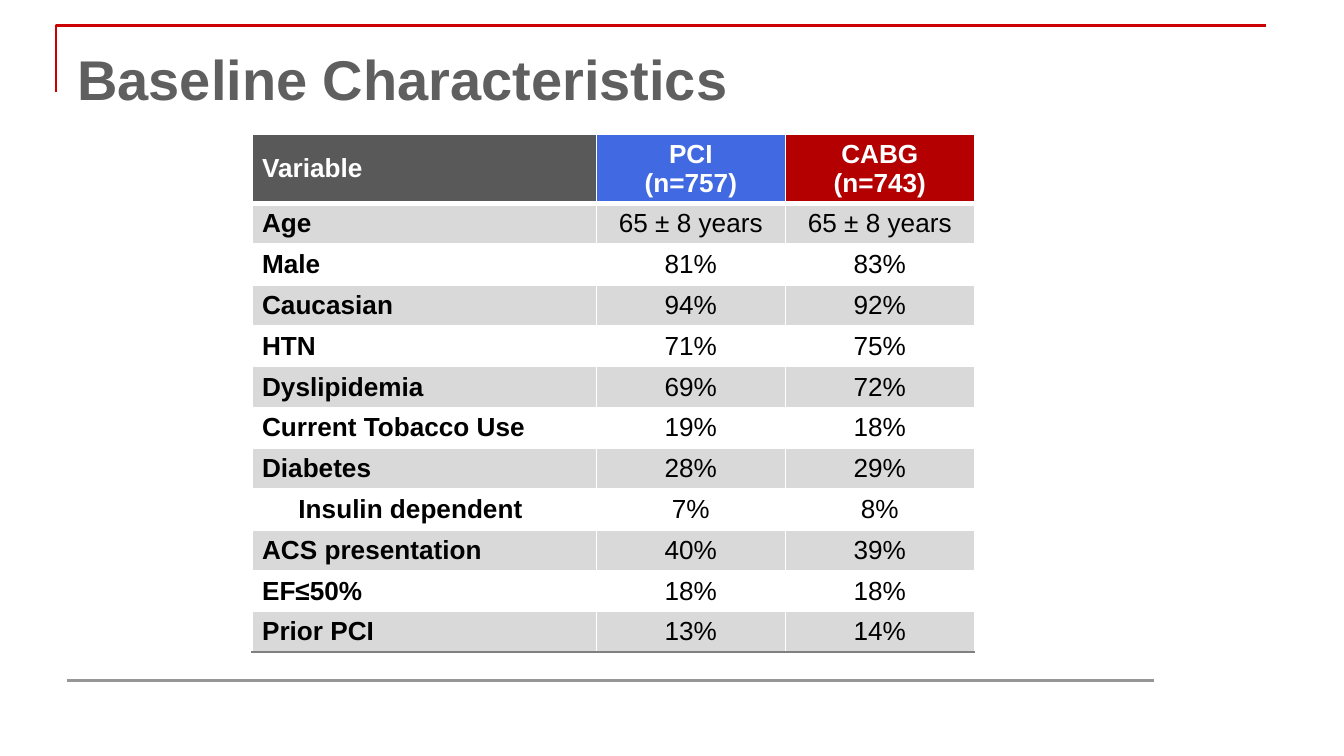
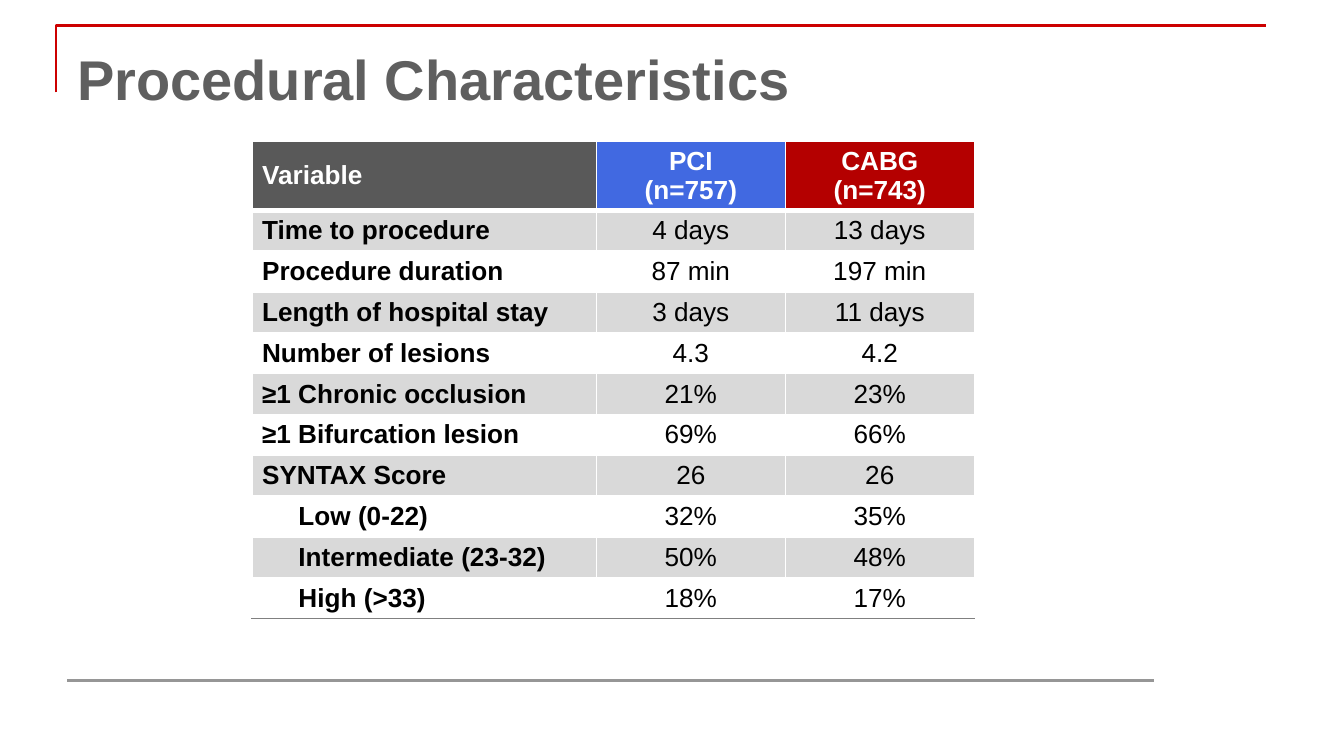
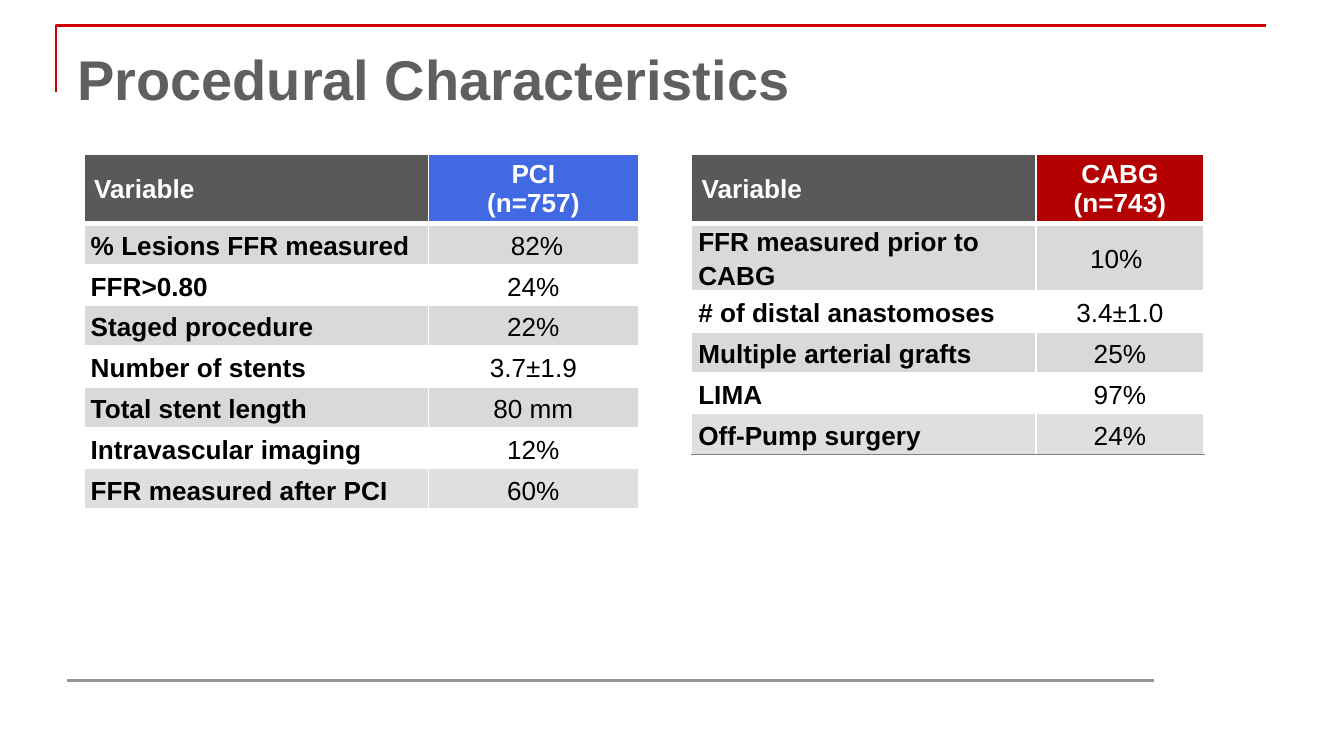
"""Build three slides of baseline and procedural characteristics tables."""
from lxml import etree
from pptx import Presentation
from pptx.dml.color import RGBColor
from pptx.enum import shapes, text
from pptx.oxml import ns
from pptx.util import Pt

FONT = "Arial"
WHITE = RGBColor(0xFF, 0xFF, 0xFF)
BLACK = RGBColor(0x00, 0x00, 0x00)
RED = RGBColor(0xCC, 0x00, 0x00)
RULE_GREY = RGBColor(0x96, 0x96, 0x96)
TITLE_GREY = RGBColor(0x5F, 0x5F, 0x5F)
HEADER_GREY = RGBColor(0x59, 0x59, 0x59)
EDGE_GREY = RGBColor(0x80, 0x80, 0x80)
BAND = RGBColor(0xD9, 0xD9, 0xD9)
LAST_BAND = RGBColor(0xDF, 0xDF, 0xDF)
PCI_BLUE = RGBColor(0x41, 0x69, 0xE1)
CABG_RED = RGBColor(0xB4, 0x00, 0x00)

VARIABLE = ("Variable", HEADER_GREY)
PCI = ("PCI\n(n=757)", PCI_BLUE)
CABG = ("CABG\n(n=743)", CABG_RED)

HEADER_HEIGHT, ROW_HEIGHT = 37, 21.86
SUB_INDENT = 19.5
WIDE = {"inset": (5.4, 2.7), "spacing": None, "last_band": BAND}
TIGHT = {"inset": (3.6, 0), "spacing": 1.15, "last_band": LAST_BAND}
BOTH_ARMS = {"header": [VARIABLE, PCI, CABG], "widths": [184.5, 101.25, 101.25],
             "left": 135, "style": WIDE, "edge": EDGE_GREY}

SLIDES = [
    ("Baseline Characteristics", [
        {**BOTH_ARMS, "top": 72, "indented": {"Insulin dependent"}, "rows": [
            ("Age", "65 ± 8 years", "65 ± 8 years"),
            ("Male", "81%", "83%"),
            ("Caucasian", "94%", "92%"),
            ("HTN", "71%", "75%"),
            ("Dyslipidemia", "69%", "72%"),
            ("Current Tobacco Use", "19%", "18%"),
            ("Diabetes", "28%", "29%"),
            ("Insulin dependent", "7%", "8%"),
            ("ACS presentation", "40%", "39%"),
            ("EF≤50%", "18%", "18%"),
            ("Prior PCI", "13%", "14%"),
        ]},
    ]),
    ("Procedural Characteristics", [
        {**BOTH_ARMS, "top": 75.75,
         "indented": {"Low (0-22)", "Intermediate (23-32)", "High (>33)"}, "rows": [
             ("Time to procedure", "4 days", "13 days"),
             ("Procedure duration", "87 min", "197 min"),
             ("Length of hospital stay", "3 days", "11 days"),
             ("Number of lesions", "4.3", "4.2"),
             ("≥1 Chronic occlusion", "21%", "23%"),
             ("≥1 Bifurcation lesion", "69%", "66%"),
             ("SYNTAX Score", "26", "26"),
             ("Low (0-22)", "32%", "35%"),
             ("Intermediate (23-32)", "50%", "48%"),
             ("High (>33)", "18%", "17%"),
         ]},
    ]),
    ("Procedural Characteristics", [
        {"header": [VARIABLE, PCI], "widths": [184.5, 112.5], "left": 45, "top": 82.8,
         "style": TIGHT, "edge": WHITE, "indented": set(), "rows": [
             ("% Lesions FFR measured", " 82%"),
             ("FFR>0.80", "24%"),
             ("Staged procedure", "22%"),
             ("Number of stents", "3.7±1.9"),
             ("Total stent length", "80 mm"),
             ("Intravascular imaging", "12%"),
             ("FFR measured after PCI", "60%"),
         ]},
        {"header": [VARIABLE, CABG], "widths": [184.5, 90], "left": 370.5, "top": 82.8,
         "style": TIGHT, "edge": EDGE_GREY, "indented": set(), "rows": [
             ("FFR measured prior to CABG", "10% "),
             ("# of distal anastomoses", "3.4±1.0"),
             ("Multiple arterial grafts", "25%"),
             ("LIMA", "97%"),
             ("Off-Pump surgery", "24%"),
         ]},
    ]),
]


def write(paragraph, words, size, color, bold):
    run = paragraph.add_run()
    run.text = words
    run.font.name, run.font.size = FONT, Pt(size)
    run.font.bold = bold
    run.font.color.rgb = color


def draw_frame(slide):
    corner = slide.shapes.build_freeform(Pt(30), Pt(49.5))
    corner.add_line_segments([(Pt(30), Pt(13.5)), (Pt(678), Pt(13.5))], close=False)
    bracket = corner.convert_to_shape()
    bracket.fill.background()
    bracket.shadow.inherit = False
    footer_rule = slide.shapes.add_connector(
        shapes.MSO_CONNECTOR.STRAIGHT, Pt(36), Pt(364.5), Pt(618), Pt(364.5))
    etree.SubElement(footer_rule._element.spPr, ns.qn("a:effectLst"))
    for rule, color in ((bracket, RED), (footer_rule, RULE_GREY)):
        rule.line.color.rgb = color
        rule.line.width = Pt(1.5)


def set_title(slide, words):
    title = slide.shapes.title
    title.left, title.top, title.width, title.height = Pt(36), Pt(16.5), Pt(648), Pt(67)
    frame = title.text_frame
    frame.vertical_anchor = text.MSO_ANCHOR.TOP
    frame.auto_size = text.MSO_AUTO_SIZE.NONE
    frame.margin_left = frame.margin_right = Pt(5.4)
    frame.margin_top = Pt(7.2)
    frame.paragraphs[0].alignment = text.PP_ALIGN.LEFT
    write(frame.paragraphs[0], words, 30, TITLE_GREY, True)


def set_borders(cell, top_width, bottom_width, bottom_color):
    properties = cell._tc.get_or_add_tcPr()
    edges = (("a:lnL", 1, WHITE), ("a:lnR", 1, WHITE),
             ("a:lnT", top_width, WHITE), ("a:lnB", bottom_width, bottom_color))
    for tag, width, color in edges:
        line = etree.SubElement(properties, ns.qn(tag), w=str(Pt(width)))
        fill = etree.SubElement(line, ns.qn("a:solidFill"))
        etree.SubElement(fill, ns.qn("a:srgbClr"), val=str(color))


def fill_cell(cell, words, fill, color, bold, centred, inset, spacing=None, indent=0):
    cell.fill.solid()
    cell.fill.fore_color.rgb = fill
    cell.vertical_anchor = text.MSO_ANCHOR.MIDDLE
    side, end = inset
    cell.margin_left, cell.margin_right = Pt(side + indent), Pt(side)
    cell.margin_top = cell.margin_bottom = Pt(end)
    frame = cell.text_frame
    for number, line in enumerate(words.split("\n")):
        paragraph = frame.add_paragraph() if number else frame.paragraphs[0]
        paragraph.alignment = text.PP_ALIGN.CENTER if centred else text.PP_ALIGN.LEFT
        if spacing:
            paragraph.line_spacing = spacing
        write(paragraph, line, 14, color, bold)


def add_characteristics(slide, spec_table):
    rows, widths, style = spec_table["rows"], spec_table["widths"], spec_table["style"]
    last = len(rows)
    table = slide.shapes.add_table(
        last + 1, len(widths), Pt(spec_table["left"]), Pt(spec_table["top"]),
        Pt(sum(widths)), Pt(HEADER_HEIGHT + last * ROW_HEIGHT)).table
    table.first_row = table.horz_banding = False
    for column, width in zip(table.columns, widths):
        column.width = Pt(width)
    for number, row in enumerate(table.rows):
        row.height = Pt(ROW_HEIGHT if number else HEADER_HEIGHT)

    for column, (heading, color) in enumerate(spec_table["header"]):
        cell = table.cell(0, column)
        set_borders(cell, 1, 3, WHITE)
        fill_cell(cell, heading, color, WHITE, True, column > 0, WIDE["inset"])
    for number, values in enumerate(rows, 1):
        band = style["last_band"] if number == last else BAND
        for column, value in enumerate(values):
            cell = table.cell(number, column)
            set_borders(cell, 3 if number == 1 else 1, 1,
                        spec_table["edge"] if number == last else WHITE)
            fill_cell(cell, value, band if number % 2 else WHITE, BLACK,
                      column == 0, column > 0, style["inset"], style["spacing"],
                      SUB_INDENT if value in spec_table["indented"] else 0)


def main():
    deck = Presentation()
    deck.slide_width, deck.slide_height = Pt(720), Pt(405)
    for heading, tables in SLIDES:
        slide = deck.slides.add_slide(deck.slide_layouts[5])
        draw_frame(slide)
        set_title(slide, heading)
        for characteristics in tables:
            add_characteristics(slide, characteristics)
    deck.save("out.pptx")


if __name__ == "__main__":
    main()
